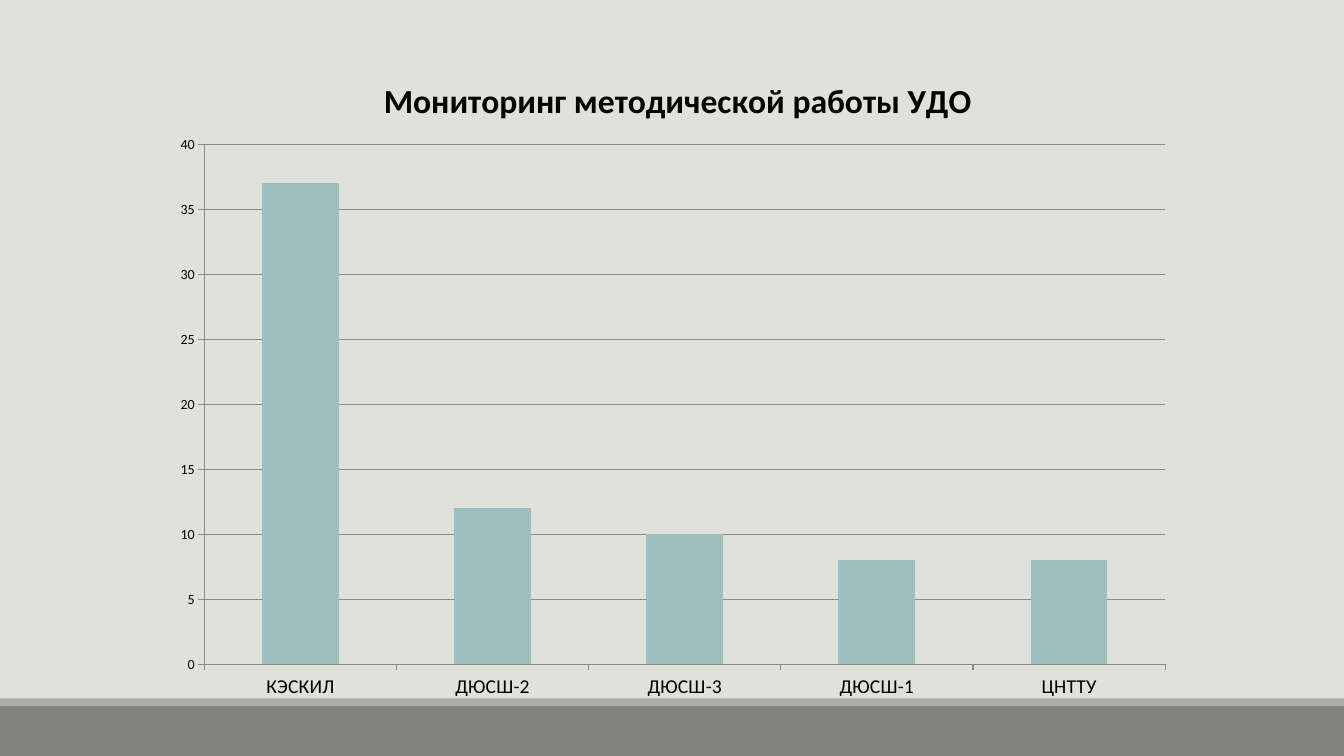
from dataclasses import dataclass

import lxml.etree
import pptx
import pptx.chart.chart
import pptx.chart.data
import pptx.dml.color
import pptx.enum.chart
import pptx.enum.shapes
import pptx.oxml.ns
import pptx.slide
import pptx.text.text
import pptx.util
from pptx.util import Inches

BACKGROUND = pptx.dml.color.RGBColor(0xE1, 0xE1, 0xDB)
FOOTER = pptx.dml.color.RGBColor(0x82, 0x84, 0x7C)
FOOTER_EDGE = pptx.dml.color.RGBColor(0xAC, 0xAD, 0xA8)
COLUMN = pptx.dml.color.RGBColor(0x9D, 0xBF, 0xBE)
AXIS = pptx.dml.color.RGBColor(0x8B, 0x8B, 0x8B)
TEXT = pptx.dml.color.RGBColor(0, 0, 0)
FONT = "Calibri"
SLIDE_WIDTH = 13.33


@dataclass(frozen=True)
class Band:
    top: float
    height: float
    color: pptx.dml.color.RGBColor


BANDS = [Band(7, 0.5, FOOTER), Band(6.93, 0.07, FOOTER_EDGE)]
SCORES = {"КЭСКИЛ": 37, "ДЮСШ-2": 12, "ДЮСШ-3": 10, "ДЮСШ-1": 8, "ЦНТТУ": 8}


def draw_band(slide: pptx.slide.Slide, band: Band) -> None:
    strip = slide.shapes.add_shape(
        pptx.enum.shapes.MSO_SHAPE.RECTANGLE,
        Inches(0), Inches(band.top), Inches(SLIDE_WIDTH), Inches(band.height),
    )
    strip.shadow.inherit = False
    strip.fill.solid()
    strip.fill.fore_color.rgb = band.color
    strip.line.fill.background()


def format_font(font: pptx.text.text.Font, size: float, bold: bool = False) -> None:
    font.name = FONT
    font.size = pptx.util.Pt(size)
    font.bold = bold
    font.color.rgb = TEXT


def write_text(frame: pptx.text.text.TextFrame, text: str, *, size: float, bold: bool = False) -> None:
    run = frame.paragraphs[0].add_run()
    run.text = text
    format_font(run.font, size, bold)


def place(parent: lxml.etree.ElementBase, index: int, **fractions: float) -> None:
    qn = pptx.oxml.ns.qn
    for old_layout in parent.findall(qn("c:layout")):
        parent.remove(old_layout)
    layout = lxml.etree.Element(qn("c:layout"))
    manual = lxml.etree.SubElement(layout, qn("c:manualLayout"))
    settings = {"xMode": "edge", "yMode": "edge", **fractions}
    if "w" in fractions:
        settings = {"layoutTarget": "inner", **settings}
    for tag, value in settings.items():
        lxml.etree.SubElement(manual, qn(f"c:{tag}")).set("val", str(value))
    parent.insert(index, layout)


def draw_chart(slide: pptx.slide.Slide) -> None:
    data = pptx.chart.data.CategoryChartData()
    data.categories = list(SCORES)
    data.add_series("Series 1", list(SCORES.values()))
    chart = slide.shapes.add_chart(
        pptx.enum.chart.XL_CHART_TYPE.COLUMN_CLUSTERED,
        Inches(1.58), Inches(0.43), Inches(10.17), Inches(6.64), data,
    ).chart
    format_font(chart.font, 10)
    chart.has_legend = False
    chart.has_title = True
    write_text(chart.chart_title.text_frame, "Мониторинг методической работы УДО", size=24, bold=True)
    chart.chart_title.include_in_layout = False

    columns = chart.plots[0]
    columns.gap_width = 150
    columns.vary_by_categories = False
    fill = columns.series[0].format.fill
    fill.solid()
    fill.fore_color.rgb = COLUMN

    for axis, size in ((chart.category_axis, 14), (chart.value_axis, 10)):
        format_font(axis.tick_labels.font, size)
        axis.major_tick_mark = pptx.enum.chart.XL_TICK_MARK.OUTSIDE
        axis.minor_tick_mark = pptx.enum.chart.XL_TICK_MARK.NONE
        axis.format.line.color.rgb = AXIS
        axis.format.line.width = pptx.util.Pt(0.75)
    scale = chart.value_axis
    scale.minimum_scale, scale.maximum_scale, scale.major_unit = 0, 40, 5
    scale.has_major_gridlines = True
    scale.major_gridlines.format.line.color.rgb = AXIS
    scale.major_gridlines.format.line.width = pptx.util.Pt(0.75)

    plot_area = chart.element.find(".//" + pptx.oxml.ns.qn("c:plotArea"))
    place(plot_area, 0, x=0.044, y=0.151, w=0.937, h=0.777)
    place(chart.chart_title.element, 1, x=0.213, y=0.042)


def main() -> None:
    presentation = pptx.Presentation()
    presentation.slide_width = Inches(SLIDE_WIDTH)
    presentation.slide_height = Inches(7.5)
    slide = presentation.slides.add_slide(presentation.slide_layouts[6])
    slide.background.fill.solid()
    slide.background.fill.fore_color.rgb = BACKGROUND
    for band in BANDS:
        draw_band(slide, band)
    draw_chart(slide)
    presentation.save("out.pptx")


if __name__ == "__main__":
    main()
